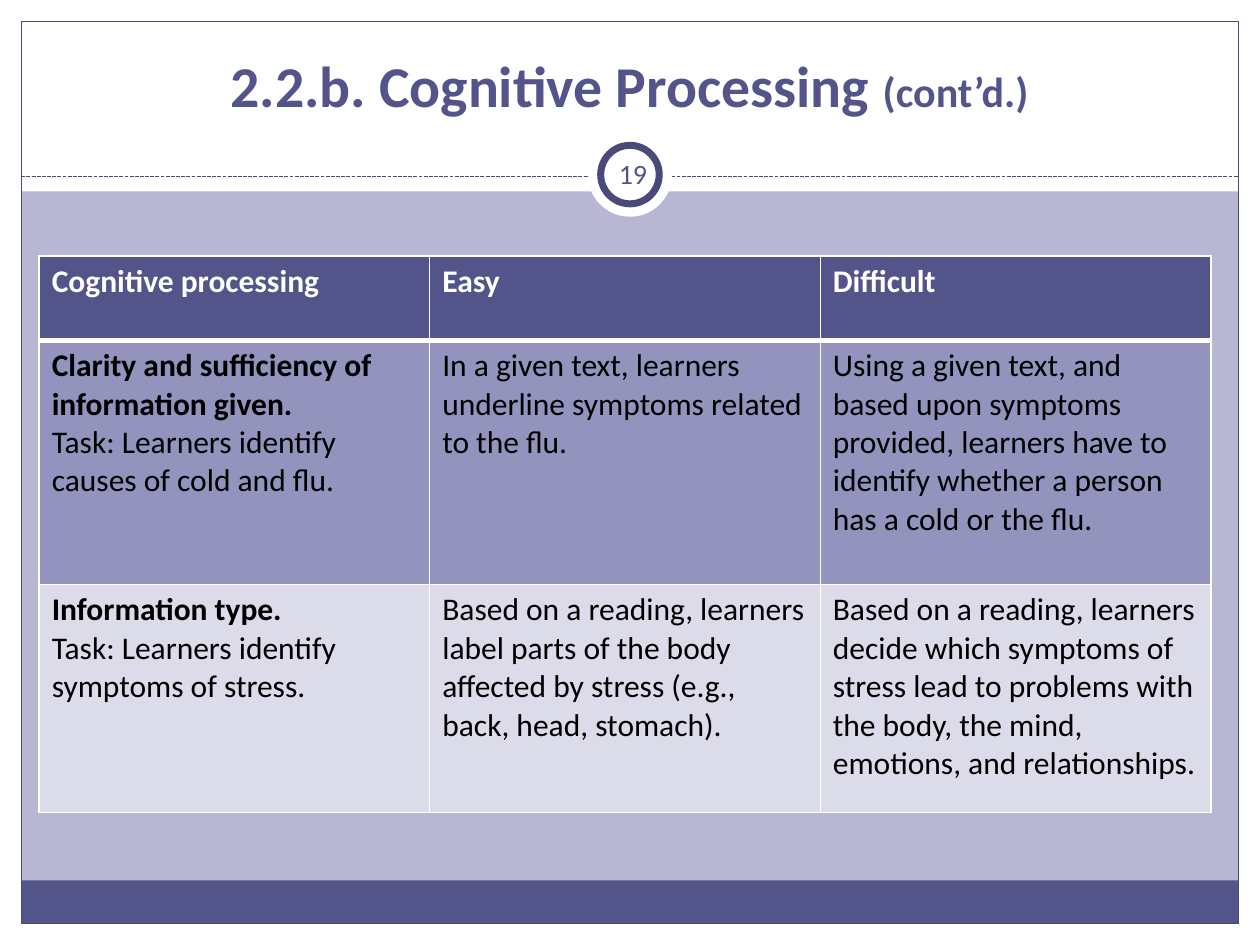
from lxml import etree
from pptx import Presentation
from pptx.dml.color import RGBColor
from pptx.enum.dml import MSO_LINE
from pptx.enum.shapes import MSO_CONNECTOR, MSO_SHAPE
from pptx.enum.text import MSO_ANCHOR, MSO_AUTO_SIZE, PP_ALIGN
from pptx.oxml.ns import qn
from pptx.util import Cm, Pt

RECTANGLE, OVAL = MSO_SHAPE.RECTANGLE, MSO_SHAPE.OVAL
STRAIGHT = MSO_CONNECTOR.STRAIGHT
DASH = MSO_LINE.SQUARE_DOT
MIDDLE = MSO_ANCHOR.MIDDLE
CENTER, LEFT = PP_ALIGN.CENTER, PP_ALIGN.LEFT
NO_AUTOFIT = MSO_AUTO_SIZE.NONE

FONT = "Calibri"
COLORS = {
    "white": "FFFFFF", "black": "000000", "backdrop": "B7B7D4",
    "purple": "53548A", "outline": "494A7A",
    "band_dark": "9394BE", "band_light": "DBDBE9",
}
WIDTH, HEIGHT, MARGIN = 25.4, 19.05, 0.43

# Each cell is a list of paragraphs: (text, bold)
ROWS = [
    [[("Cognitive processing", True)], [("Easy", True)], [("Difficult", True)]],
    [
        [("Clarity and sufficiency of information given.", True),
         ("Task: Learners identify causes of cold and flu.", False)],
        [("In a given text, learners underline symptoms related to the flu.", False)],
        [("Using a given text, and based upon symptoms provided, learners have to "
          "identify whether a person has a cold or the flu.", False)],
    ],
    [
        [("Information type.", True),
         ("Task: Learners identify symptoms of stress.", False)],
        [("Based on a reading, learners label parts of the body affected by stress "
          "(e.g., back, head, stomach).", False)],
        [("Based on a reading, learners decide which symptoms of stress lead to "
          "problems with the body, the mind, emotions, and relationships.", False)],
    ],
]
# Height in cm, fill and text colour of each row
ROW_STYLES = [
    (1.7, "purple", "white"),
    (4.92, "band_dark", "black"),
    (4.6, "band_light", "black"),
]


def color(name):
    return RGBColor.from_string(COLORS[name])


def add_text(para, text, size=18, ink="black", bold=False, align=LEFT):
    para.alignment = align
    span = para.add_run()
    span.text = text
    span.font.name = FONT
    span.font.size = Pt(size)
    span.font.bold = bold
    span.font.color.rgb = color(ink)


def set_frame(frame, inset):
    frame.word_wrap = True
    frame.auto_size = NO_AUTOFIT
    frame.vertical_anchor = MIDDLE
    frame.margin_left = frame.margin_right = Cm(inset)
    frame.margin_top = frame.margin_bottom = Cm(0.13)


def add_shape(page, kind, left, top, width, height, fill=None, line=None, weight=0.75):
    shape = page.shapes.add_shape(kind, Cm(left), Cm(top), Cm(width), Cm(height))
    shape.shadow.inherit = False
    if fill:
        shape.fill.solid()
        shape.fill.fore_color.rgb = color(fill)
    else:
        shape.fill.background()
    if line:
        shape.line.color.rgb = color(line)
        shape.line.width = Pt(weight)
    else:
        shape.line.fill.background()


def add_dashed_line(page, top):
    line = page.shapes.add_connector(
        STRAIGHT, Cm(MARGIN), Cm(top), Cm(WIDTH - MARGIN), Cm(top))
    line.line.color.rgb = color("outline")
    line.line.width = Pt(0.75)
    line.line.dash_style = DASH
    etree.SubElement(line._element.spPr, qn("a:effectLst"))


def add_frame(page):
    # White margins around the coloured body
    for box in [(0, HEIGHT - MARGIN, WIDTH, MARGIN), (0, 0, WIDTH, 3.86),
                (0, 0, MARGIN, HEIGHT), (WIDTH - MARGIN, 0, MARGIN, HEIGHT)]:
        add_shape(page, RECTANGLE, *box, fill="white")
    # Footer band, outline and divider
    inner = WIDTH - 2 * MARGIN
    add_shape(page, RECTANGLE, MARGIN, 17.75, inner, 0.87, fill="purple")
    add_shape(page, RECTANGLE, MARGIN, MARGIN, inner, HEIGHT - 2 * MARGIN, line="outline")
    add_dashed_line(page, 3.56)
    # Ring for the page number
    add_shape(page, OVAL, 11.85, 2.67, 1.7, 1.7, fill="white")
    add_shape(page, OVAL, 12.11, 2.93, 1.18, 1.18, fill="white", line="outline", weight=4)


def add_title(page):
    title = page.shapes.title
    title.left, title.top, title.width, title.height = Cm(0.84), Cm(0.41), Cm(23.7), Cm(2.59)
    set_frame(title.text_frame, 0.25)
    para = title.text_frame.paragraphs[0]
    for text, size in [("2.2.b. Cognitive Processing ", 33), ("(cont’d.)", 24)]:
        add_text(para, text, size=size, ink="purple", bold=True, align=CENTER)


def add_page_number(page):
    box = page.shapes.add_textbox(Cm(12.11), Cm(2.84), Cm(1.3), Cm(1.32))
    set_frame(box.text_frame, 0.13)
    add_text(box.text_frame.paragraphs[0], "19", size=16, ink="purple", align=CENTER)


def set_borders(cell, top, bottom):
    properties = cell._tc.get_or_add_tcPr()
    weights = {"a:lnL": 1, "a:lnR": 1, "a:lnT": top, "a:lnB": bottom}
    for position, (tag, weight) in enumerate(weights.items()):
        border = etree.Element(qn(tag), w=str(Pt(weight)))
        fill = etree.SubElement(border, qn("a:solidFill"))
        etree.SubElement(fill, qn("a:srgbClr"), val=COLORS["white"])
        properties.insert(position, border)


def add_task_table(page):
    total = sum(style[0] for style in ROW_STYLES)
    table = page.shapes.add_table(
        len(ROWS), len(ROWS[0]), Cm(0.79), Cm(5.16), Cm(23.62), Cm(total)).table
    for index, (cells, (height, fill, ink)) in enumerate(zip(ROWS, ROW_STYLES)):
        table.rows[index].height = Cm(height)
        for column, paragraphs in enumerate(cells):
            cell = table.cell(index, column)
            cell.fill.solid()
            cell.fill.fore_color.rgb = color(fill)
            # A heavier rule parts the header from the body
            set_borders(cell, top=3 if index == 1 else 1, bottom=3 if index == 0 else 1)
            for number, (text, bold) in enumerate(paragraphs):
                frame = cell.text_frame
                para = frame.add_paragraph() if number else frame.paragraphs[0]
                add_text(para, text, ink=ink, bold=bold)


def main():
    deck = Presentation()
    deck.slide_width, deck.slide_height = Cm(WIDTH), Cm(HEIGHT)
    page = deck.slides.add_slide(deck.slide_layouts[5])
    page.background.fill.solid()
    page.background.fill.fore_color.rgb = color("backdrop")
    add_frame(page)
    add_title(page)
    # Bring the title in front of the white header
    page.shapes._spTree.append(page.shapes.title._element)
    add_task_table(page)
    add_page_number(page)
    deck.save("out.pptx")


if __name__ == "__main__":
    main()
